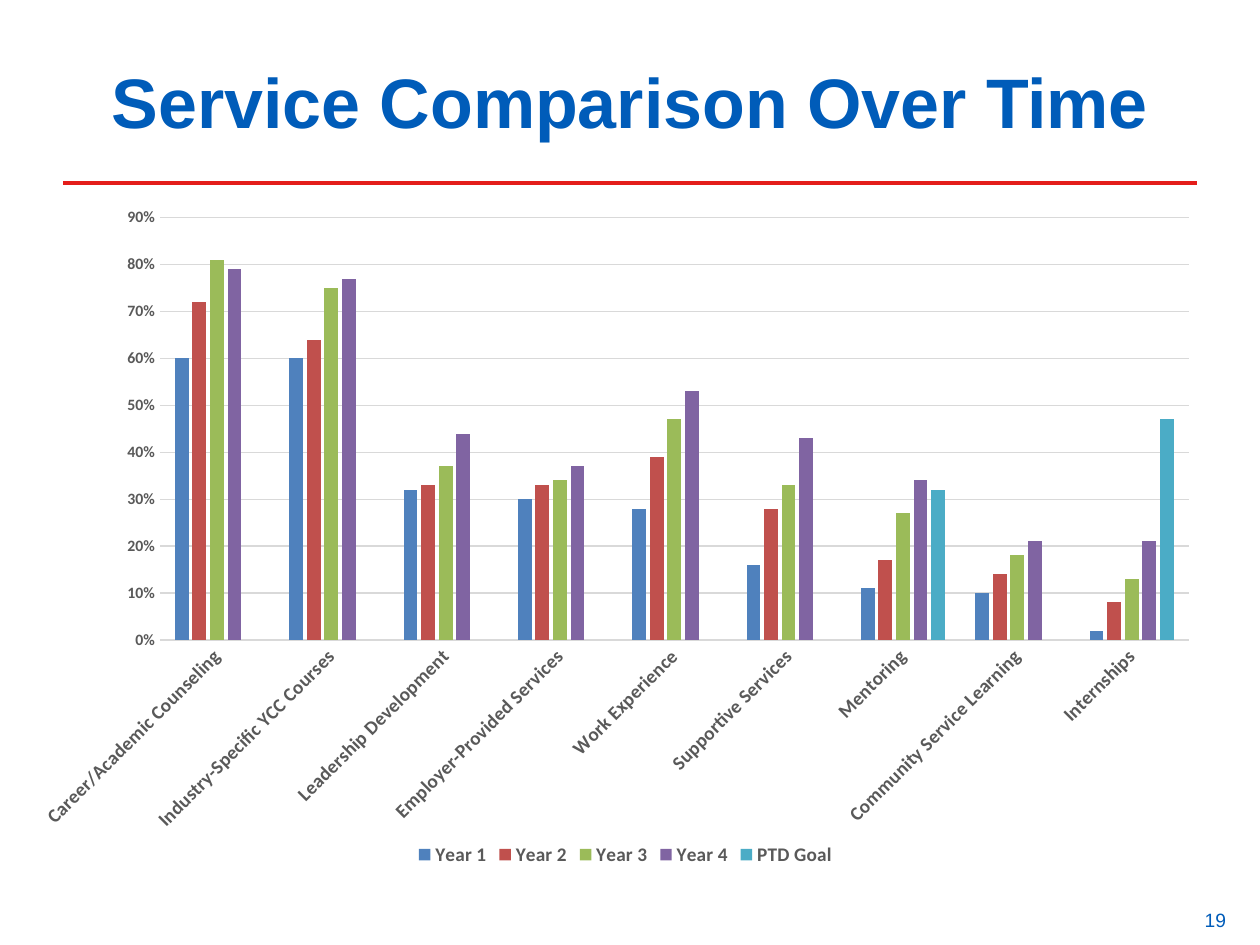
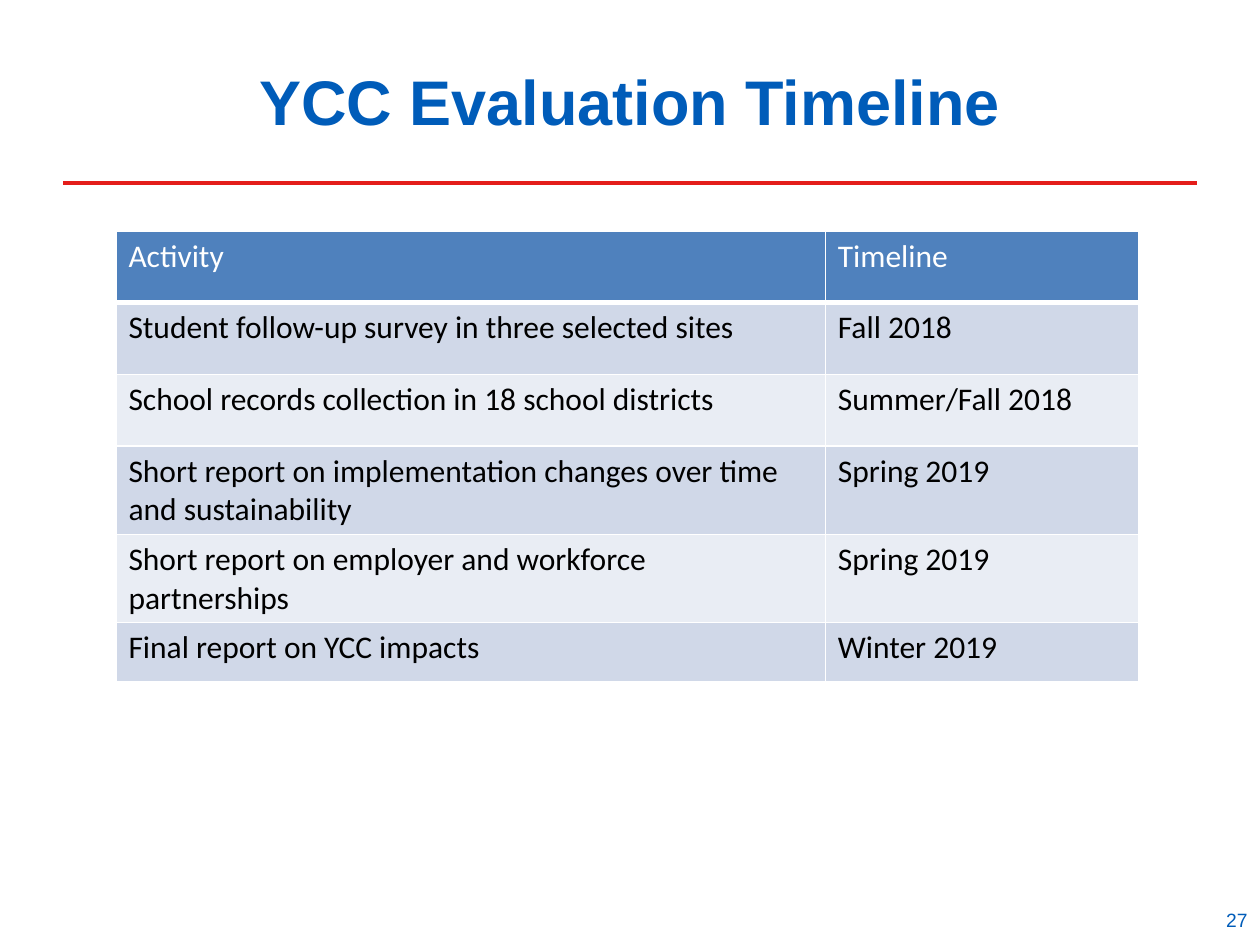
"""Build two slides: a service comparison chart and an evaluation timeline table."""
from typing import NamedTuple

from lxml.etree import SubElement
from pptx import Presentation
from pptx.chart.data import CategoryChartData as ChartData
from pptx.dml.color import RGBColor as RGB
from pptx.enum.chart import XL_CHART_TYPE as CT, XL_LEGEND_POSITION as LP, XL_TICK_MARK as TM
from pptx.enum.shapes import MSO_CONNECTOR as CONN
from pptx.enum.text import MSO_ANCHOR as ANC, PP_ALIGN as AL
from pptx.oxml import parse_xml
from pptx.oxml.ns import nsdecls, qn
from pptx.util import Pt

COLORS = {
    "blue": "005CB9", "red": "E41D1A", "white": "FFFFFF", "black": "000000",
    "label": "595959", "grid": "D9D9D9", "header": "4F81BD",
    "band_dark": "D0D8E8", "band_light": "E9EDF4",
}
HEAD_FONT, BODY_FONT = "Arial", "Calibri"


class Box(NamedTuple):
    left: float
    top: float
    width: float
    height: float

    def pts(self) -> list:
        return [Pt(v) for v in self]


class Frame(NamedTuple):
    title: str
    size: float
    number: str
    number_left: float


class Series(NamedTuple):
    name: str
    color: str
    values: tuple


class Activity(NamedTuple):
    name: str
    timeline: str
    height: float = 41.04


COMPARISON = Frame("Service Comparison Over Time", 40, "19", 540)
TIMELINE = Frame("YCC Evaluation Timeline", 36, "27", 552.24)
TITLE_BOX = Box(36, 12.24, 648, 90)
CHART_BOX = Box(24, 108, 666, 390)
TABLE_BOX = Box(66.24, 131.9, 584.64, 258.5)
PLOT = {"x": 0.1, "y": 0.042, "w": 0.884, "h": 0.619}
COLUMN_WIDTHS = (405.36, 179.28)

SERVICES = (
    "Career/Academic Counseling", "Industry-Specific YCC Courses",
    "Leadership Development", "Employer-Provided Services", "Work Experience",
    "Supportive Services", "Mentoring", "Community Service Learning", "Internships",
)
SERIES = (
    Series("Year 1", "4F81BD", (0.6, 0.6, 0.32, 0.3, 0.28, 0.16, 0.11, 0.1, 0.02)),
    Series("Year 2", "C0504D", (0.72, 0.64, 0.33, 0.33, 0.39, 0.28, 0.17, 0.14, 0.08)),
    Series("Year 3", "9BBB59", (0.81, 0.75, 0.37, 0.34, 0.47, 0.33, 0.27, 0.18, 0.13)),
    Series("Year 4", "8064A2", (0.79, 0.77, 0.44, 0.37, 0.53, 0.43, 0.34, 0.21, 0.21)),
    Series("PTD Goal", "4BACC6", (None,) * 6 + (0.32, None, 0.47)),
)
ACTIVITIES = (
    Activity("Activity", "Timeline"),
    Activity("Student follow-up survey in three selected sites", "Fall 2018"),
    Activity("School records collection in 18 school districts", "Summer/Fall 2018"),
    Activity("Short report on implementation changes over time and sustainability", "Spring 2019"),
    Activity("Short report on employer and workforce partnerships", "Spring 2019"),
    Activity("Final report on YCC impacts", "Winter 2019", 33.84),
)


def rgb(name: str) -> RGB:
    return RGB.from_string(COLORS.get(name, name))


def style_font(font, size: float, color: str, name: str = BODY_FONT, bold: bool = False) -> None:
    font.size, font.bold, font.name = Pt(size), bold, name
    font.color.rgb = rgb(color)


def style_line(line, color: str, width: float) -> None:
    line.color.rgb = rgb(color)
    line.width = Pt(width)


def write(tf, text: str, *, align=AL.LEFT, **fmt) -> None:
    p = tf.paragraphs[0]
    p.alignment = align
    r = p.add_run()
    r.text = text
    style_font(r.font, **fmt)


def add_text(s, box: Box, text: str, **fmt) -> None:
    tf = s.shapes.add_textbox(*box.pts()).text_frame
    tf.word_wrap = True
    tf.vertical_anchor = ANC.MIDDLE
    write(tf, text, color="blue", name=HEAD_FONT, **fmt)


def add_frame(prs, frame: Frame):
    s = prs.slides.add_slide(prs.slide_layouts[6])
    rule = s.shapes.add_connector(CONN.STRAIGHT, Pt(36), Pt(104.4), Pt(684), Pt(104.4))
    style_line(rule.line, "red", 2.25)
    SubElement(rule._element.spPr, qn("a:effectLst"))
    add_text(s, TITLE_BOX, frame.title, align=AL.CENTER, size=frame.size, bold=True)
    add_text(s, Box(frame.number_left, 511.2, 167.76, 28.8), frame.number,
             align=AL.RIGHT, size=11)
    return s


def set_plot_layout(chart) -> None:
    area = chart._chartSpace.chart.plotArea
    for old in area.findall(qn("c:layout")):
        area.remove(old)
    modes = '<c:layoutTarget val="inner"/><c:xMode val="edge"/><c:yMode val="edge"/>'
    sizes = "".join(f'<c:{k} val="{v}"/>' for k, v in PLOT.items())
    area.insert(0, parse_xml(
        f'<c:layout {nsdecls("c")}><c:manualLayout>{modes}{sizes}</c:manualLayout></c:layout>'))


def add_service_chart(s) -> None:
    data = ChartData(number_format="0%")
    data.categories = SERVICES
    for item in SERIES:
        data.add_series(item.name, item.values)
    chart = s.shapes.add_chart(CT.COLUMN_CLUSTERED, *CHART_BOX.pts(), data).chart
    style_font(chart.font, 10, "black")
    chart.has_title = False
    chart.has_legend = True
    chart.legend.position = LP.BOTTOM
    chart.legend.include_in_layout = False
    style_font(chart.legend.font, 11, "label", bold=True)

    plot = chart.plots[0]
    plot.gap_width, plot.overlap, plot.vary_by_categories = 219, -27, False
    for bars, item in zip(plot.series, SERIES):
        bars.invert_if_negative = False
        bars.format.fill.solid()
        bars.format.fill.fore_color.rgb = rgb(item.color)

    cat, val = chart.category_axis, chart.value_axis
    for axis, size in ((cat, 11), (val, 9)):
        axis.major_tick_mark = axis.minor_tick_mark = TM.NONE
        style_font(axis.tick_labels.font, size, "label", bold=True)
    style_line(cat.format.line, "grid", 0.75)
    cat._element.txPr.bodyPr.set("rot", "-2700000")
    cat._element.txPr.bodyPr.set("vert", "horz")
    val.minimum_scale, val.maximum_scale, val.major_unit = 0, 0.9, 0.1
    val.format.line.fill.background()
    val.has_major_gridlines = True
    style_line(val.major_gridlines.format.line, "grid", 0.75)
    val.tick_labels.number_format = "0%"
    val.tick_labels.number_format_is_linked = False
    set_plot_layout(chart)


def set_borders(cell, bottom: float) -> None:
    tc_pr = cell._tc.get_or_add_tcPr()
    for side, width in (("L", 1), ("R", 1), ("T", 1), ("B", bottom)):
        ln = SubElement(tc_pr, qn(f"a:ln{side}"), w=str(Pt(width)))
        fill = SubElement(ln, qn("a:solidFill"))
        SubElement(fill, qn("a:srgbClr"), val=COLORS["white"])


def add_timeline_table(s) -> None:
    table = s.shapes.add_table(len(ACTIVITIES), len(COLUMN_WIDTHS), *TABLE_BOX.pts()).table
    table.first_row = table.horz_banding = False
    for col, width in zip(table.columns, COLUMN_WIDTHS):
        col.width = Pt(width)
    for i, activity in enumerate(ACTIVITIES):
        table.rows[i].height = Pt(activity.height)
        band = "header" if i == 0 else ("band_light", "band_dark")[i % 2]
        for j, text in enumerate((activity.name, activity.timeline)):
            cell = table.cell(i, j)
            set_borders(cell, bottom=1 if i else 3)
            cell.fill.solid()
            cell.fill.fore_color.rgb = rgb(band)
            write(cell.text_frame, text, size=18, color="black" if i else "white")


def main() -> None:
    prs = Presentation()
    prs.slide_width, prs.slide_height = Pt(720), Pt(540)
    add_service_chart(add_frame(prs, COMPARISON))
    add_timeline_table(add_frame(prs, TIMELINE))
    prs.save("out.pptx")


if __name__ == "__main__":
    main()
